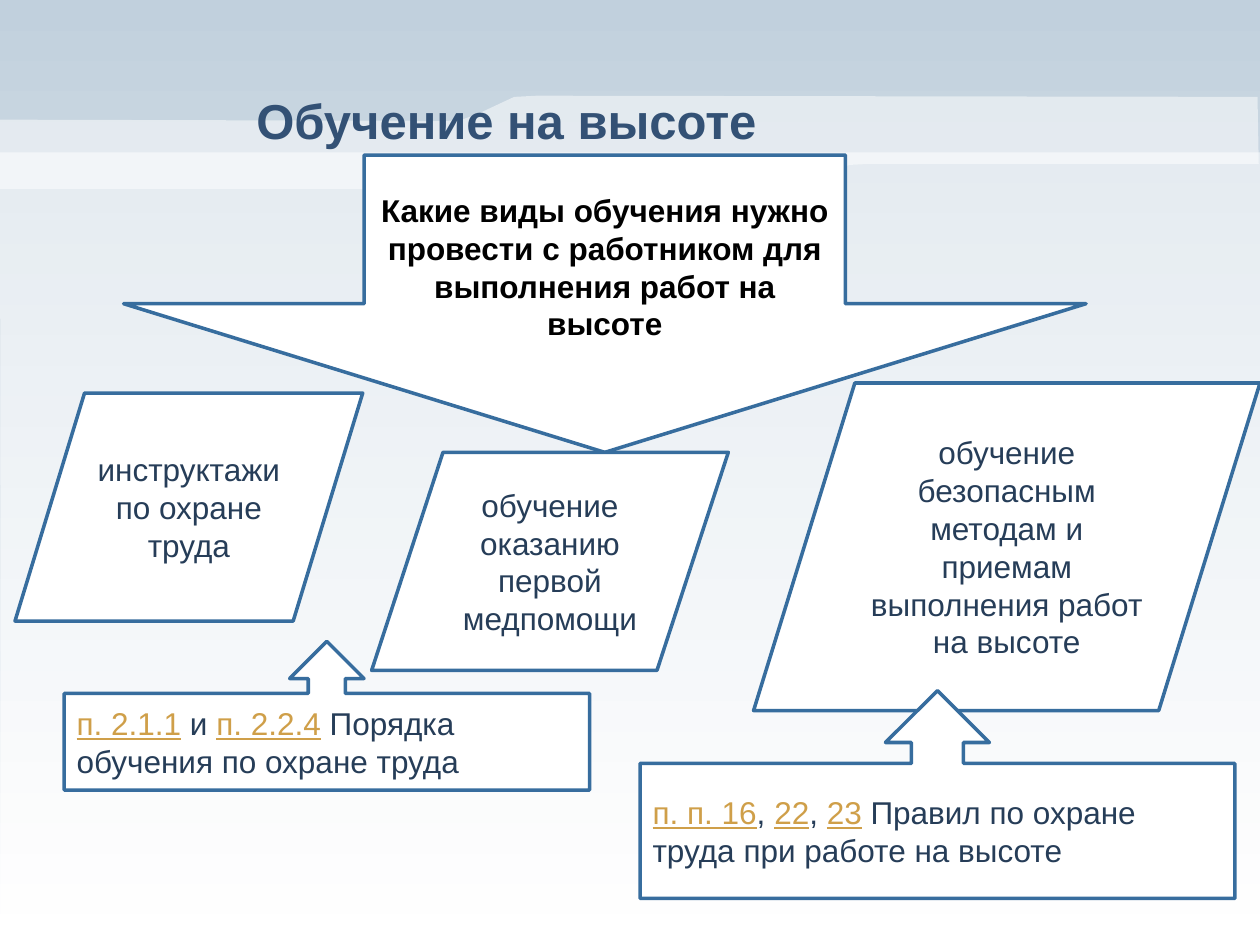
"""Build the slide on training for work at height."""
from lxml.etree import SubElement
from pptx import Presentation
from pptx.dml.color import RGBColor
from pptx.enum.shapes import MSO_SHAPE
from pptx.enum.text import MSO_ANCHOR, PP_ALIGN
from pptx.oxml.ns import qn
from pptx.util import Pt

SKY = RGBColor(0xC1, 0xD0, 0xDD)
WHITE = RGBColor(0xFF, 0xFF, 0xFF)
BLACK = RGBColor(0x00, 0x00, 0x00)
TITLE_BLUE = RGBColor(0x33, 0x51, 0x75)
OUTLINE_BLUE = RGBColor(0x37, 0x6D, 0x9E)
TEXT_BLUE = RGBColor(0x26, 0x3D, 0x58)
REFERENCE_GOLD = RGBColor(0xCF, 0x9F, 0x49)

TITLE = {"size": Pt(28), "bold": True, "color": TITLE_BLUE}
QUESTION = {"size": Pt(18), "bold": True, "color": BLACK}
BODY = {"size": Pt(18), "bold": False, "color": TEXT_BLUE}
REFERENCE = {**BODY, "underline": True, "color": REFERENCE_GOLD}

HAZE = [(0.7, 539.3), (722, 540), (720, 87.1), (0, 87.1)]
RIBBON = [
    (718.6, 55.4), (306.7, 54.7), (293.8, 55.4), (272.2, 65.5),
    (265, 68), (256.3, 69.1), (0, 68.4), (0, 108), (450.7, 108),
    (459.4, 105.8), (485.3, 94.3), (498.2, 93.6), (719.3, 93.6),
]
TRAININGS = [
    ("инструктажи по охране труда", (8.6, 224.6, 198.7, 130.3)),
    ("обучение оказанию первой медпомощи", (212.4, 258.5, 203.8, 124.6)),
    ("обучение безопасным методам и приемам выполнения работ на высоте",
     (430.6, 218.9, 289.4, 187.2)),
]
SOURCES = [
    ([("п. 2.1.1", REFERENCE), (" и ", BODY), ("п. 2.2.4", REFERENCE),
      (" Порядка обучения по охране труда", BODY)],
     (36.7, 366.5, 300.2, 85)),
    ([("п. п. 16", REFERENCE), (", ", BODY), ("22", REFERENCE),
      (", ", BODY), ("23", REFERENCE),
      (" Правил по охране труда при работе на высоте", BODY)],
     (365.8, 394.6, 339.8, 118.8)),
]


class SlideBuilder:
    """Hold the style and the current slide."""

    font_name = "Arial"

    def __init__(self, slide):
        self.slide = slide

    def background(self, top, bottom):
        """Fill the background with a vertical gradient."""
        fill = self.slide.background.fill
        fill.gradient()
        fill.gradient_angle = 270
        for stop, color, position in zip(fill.gradient_stops, (top, bottom), (0, 1)):
            stop.color.rgb = color
            stop.position = position

    def veil(self, points):
        """Draw a half-transparent white outline."""
        corners = [(Pt(x), Pt(y)) for x, y in points]
        builder = self.slide.shapes.build_freeform(*corners[0])
        builder.add_line_segments(corners[1:], close=True)
        shape = builder.convert_to_shape()
        shape.shadow.inherit = False
        shape.fill.solid()
        shape.fill.fore_color.rgb = WHITE
        color = shape.element.spPr.find(qn("a:solidFill"))[0]
        SubElement(color, qn("a:alpha"), val="50000")
        shape.line.fill.background()

    def add_text(self, shape, spans, align):
        """Put formatted spans into one paragraph."""
        frame = shape.text_frame
        frame.word_wrap = True
        frame.vertical_anchor = MSO_ANCHOR.MIDDLE
        para = frame.paragraphs[0]
        para.alignment = align
        for text, style in spans:
            span = para.add_run()
            span.text = text
            span.font.name = self.font_name
            for name, value in style.items():
                if name == "color":
                    span.font.color.rgb = value
                else:
                    setattr(span.font, name, value)

    def title(self, text, bounds):
        """Place the title."""
        title = self.slide.shapes.title
        for name, value in zip(("left", "top", "width", "height"), bounds):
            setattr(title, name, Pt(value))
        self.add_text(title, [(text, TITLE)], PP_ALIGN.CENTER)

    def box(self, kind, bounds, spans, align=PP_ALIGN.CENTER):
        """Draw a white outlined shape with text."""
        shape = self.slide.shapes.add_shape(kind, *map(Pt, bounds))
        shape.shadow.inherit = False
        shape.fill.solid()
        shape.fill.fore_color.rgb = WHITE
        shape.line.color.rgb = OUTLINE_BLUE
        shape.line.width = Pt(2)
        self.add_text(shape, spans, align)


def main():
    """Build and save the deck."""
    deck = Presentation()
    deck.slide_width, deck.slide_height = Pt(720), Pt(540)
    page = SlideBuilder(deck.slides.add_slide(deck.slide_layouts[5]))
    page.background(SKY, WHITE)
    for outline in (HAZE, RIBBON):
        page.veil(outline)
    title = page.slide.shapes.title.element
    title.getparent().append(title)
    page.title("Обучение на высоте", (14.4, 43.2, 550, 51.1))
    question = "Какие виды обучения нужно провести с работником для выполнения работ на высоте"
    page.box(MSO_SHAPE.DOWN_ARROW, (70.6, 88.6, 550, 169.9), [(question, QUESTION)])
    for text, bounds in TRAININGS:
        page.box(MSO_SHAPE.FLOWCHART_DATA, bounds, [(text, BODY)])
    for spans, bounds in SOURCES:
        page.box(MSO_SHAPE.UP_ARROW_CALLOUT, bounds, spans, PP_ALIGN.LEFT)
    deck.save("out.pptx")


if __name__ == "__main__":
    main()
